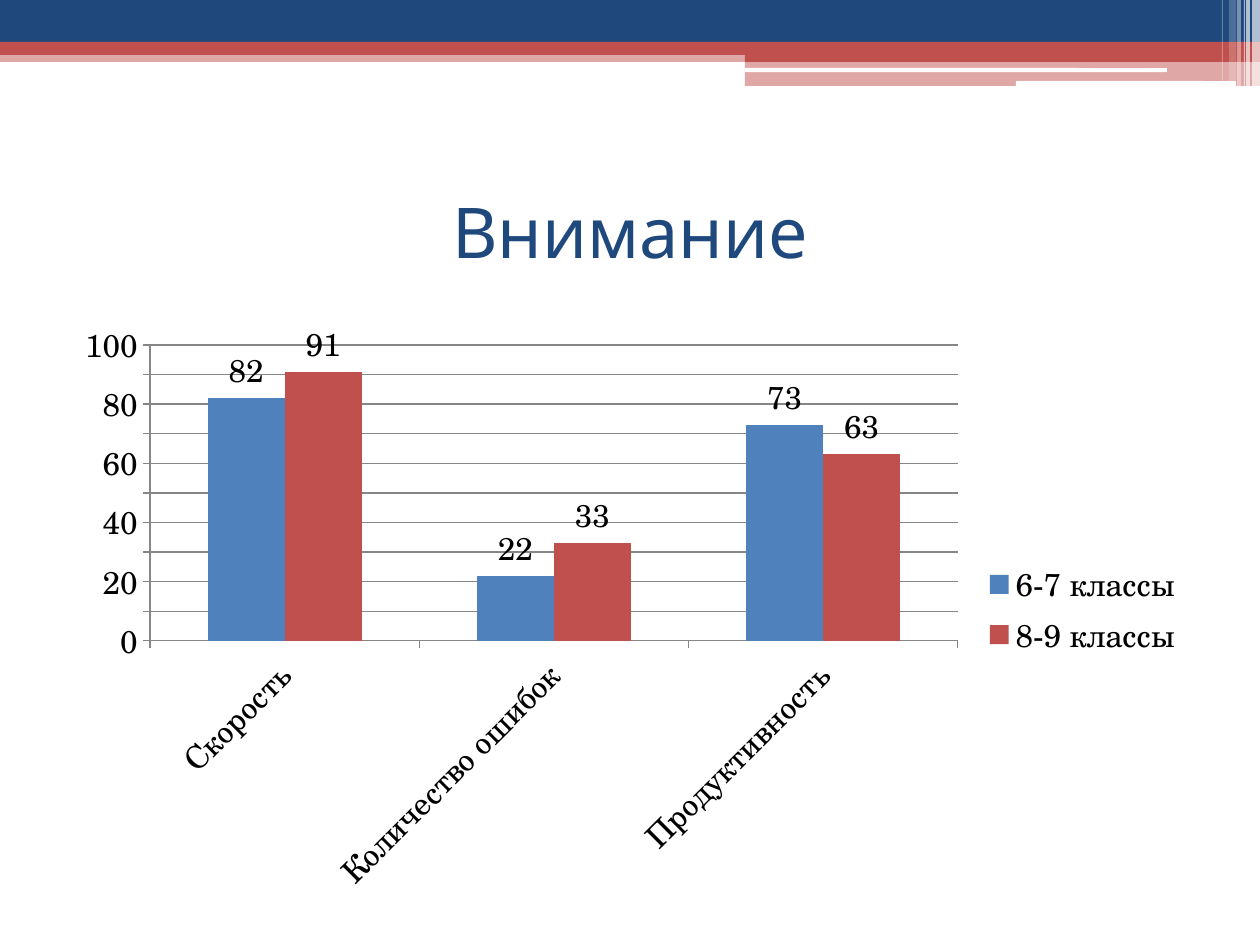
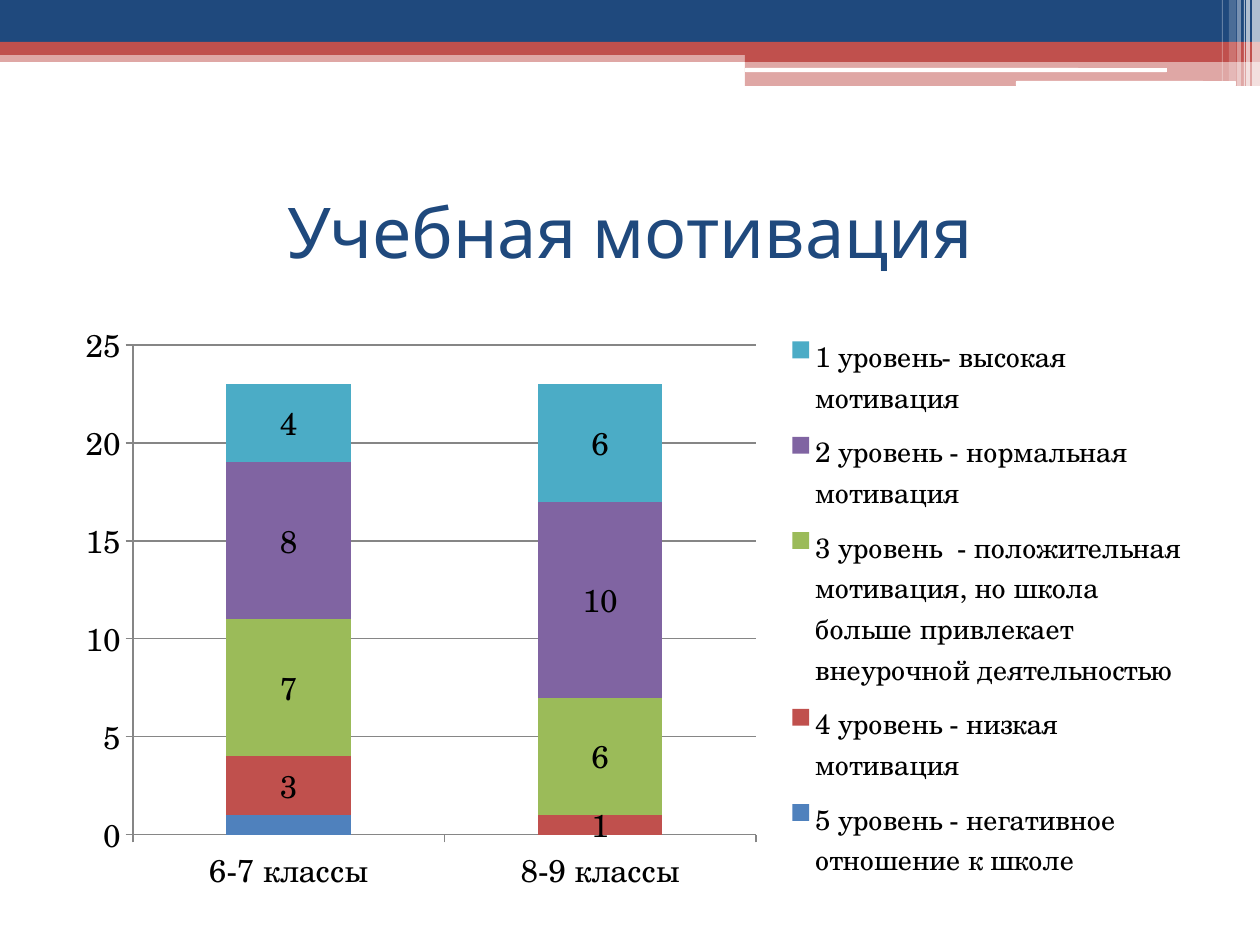
from lxml import etree
from pptx import Presentation
from pptx.chart.data import CategoryChartData
from pptx.dml.color import RGBColor
from pptx.enum.chart import XL_CHART_TYPE, XL_LABEL_POSITION, XL_LEGEND_POSITION, XL_TICK_MARK
from pptx.enum.shapes import MSO_SHAPE
from pptx.enum.text import MSO_ANCHOR, PP_ALIGN
from pptx.oxml import parse_xml
from pptx.oxml.ns import nsdecls, qn
from pptx.util import Pt

RECT, ROUNDED = MSO_SHAPE.RECTANGLE, MSO_SHAPE.ROUNDED_RECTANGLE
CLUSTERED, STACKED = XL_CHART_TYPE.COLUMN_CLUSTERED, XL_CHART_TYPE.COLUMN_STACKED
OUTSIDE, CENTER = XL_LABEL_POSITION.OUTSIDE_END, XL_LABEL_POSITION.CENTER
LEGEND_RIGHT = XL_LEGEND_POSITION.RIGHT
TICK_OUT, TICK_NONE = XL_TICK_MARK.OUTSIDE, XL_TICK_MARK.NONE

SLIDE_W, SLIDE_H = 1260, 945
PX = 914400 / 126  # EMU in one px
TITLE_BOX = (63, 157, 1134, 147)
CHART_BOX = (63, 310, 1134, 596)
TITLE_FONT, CHART_FONT = "Karla", "TeX Gyre Schola"

COLORS = {
    "navy": "1F497D", "red": "C0504D", "white": "FFFFFF", "black": "000000",
    "blue": "4F81BD", "green": "9BBB59", "purple": "8064A2", "teal": "4BACC6",
    "grey": "868686",
}

# Header bands: box, colour, opacity in percent, preset
HEADER = [
    ((0, 50, SLIDE_W, 12), "red", 50, RECT),
    ((0, 0, SLIDE_W, 42), "navy", 100, RECT),
    ((0, 42, SLIDE_W, 13), "red", 100, RECT),
    ((745, 49, 515, 13), "red", 100, RECT),
    ((745, 61, 515, 25), "red", 50, RECT),
    ((745, 68, 422, 4), "white", 100, ROUNDED),
    ((1016, 81, 220, 5), "white", 100, ROUNDED),
]
# Stripes at the right edge: left, width, height, opacity in percent
STRIPES = [(1252, 8, 86, 65), (1246, 4, 86, 65), (1244, 1, 86, 60),
           (1237, 4, 86, 40), (1229, 7, 81, 20), (1222, 1, 81, 30)]


def rgb(name):
    return RGBColor.from_string(COLORS[name])


def emu(box):
    return [round(length * PX) for length in box]


def manual_layout(box, inner=False):
    """Layout of a chart part, from its box on the slide."""
    left, top, width, height = CHART_BOX
    x, y, w, h = box
    values = {"xMode": "edge", "yMode": "edge",
              "x": round((x - left) / width, 4), "y": round((y - top) / height, 4),
              "w": round(w / width, 4), "h": round(h / height, 4)}
    if inner:
        values = {"layoutTarget": "inner", **values}
    children = "".join(f'<c:{tag} val="{value}"/>' for tag, value in values.items())
    return parse_xml(f'<c:layout {nsdecls("c")}><c:manualLayout>{children}'
                     '</c:manualLayout></c:layout>')


class Deck:
    def __init__(self):
        self.prs = Presentation()
        self.prs.slide_width, self.prs.slide_height = emu((SLIDE_W, SLIDE_H))
        self.slide = None

    def new_slide(self, title):
        self.slide = self.prs.slides.add_slide(self.prs.slide_layouts[6])
        for box, color, opacity, preset in HEADER:
            self.band(box, color, opacity, preset)
        for left, width, height, opacity in STRIPES:
            self.band((left, 0, width, height), "white", opacity)
        self.title(title)

    def band(self, box, color, opacity=100, preset=RECT):
        band = self.slide.shapes.add_shape(preset, *emu(box))
        band.shadow.inherit = False
        band.line.fill.background()
        band.fill.solid()
        band.fill.fore_color.rgb = rgb(color)
        if opacity < 100:
            fill = band.fill._xPr.find(qn("a:solidFill"))
            etree.SubElement(fill[0], qn("a:alpha")).set("val", str(opacity * 1000))

    def title(self, text):
        frame = self.slide.shapes.add_textbox(*emu(TITLE_BOX)).text_frame
        frame.word_wrap = True
        frame.vertical_anchor = MSO_ANCHOR.MIDDLE
        paragraph = frame.paragraphs[0]
        paragraph.text = text
        paragraph.alignment = PP_ALIGN.CENTER
        self.style_font(paragraph.font, 40, "navy", TITLE_FONT)

    def style_font(self, font, size, color="black", name=CHART_FONT):
        font.size, font.name = Pt(size), name
        font.color.rgb = rgb(color)

    def column_chart(self, kind, categories, series, top_value, step,
                     plot_box, legend_box, legend_size=18, label_angle=0):
        """Series are (name, values, colour, labelled)."""
        data = CategoryChartData()
        data.categories = categories
        for name, values, _, _ in series:
            data.add_series(name, values)
        chart = self.slide.shapes.add_chart(kind, *emu(CHART_BOX), data).chart
        chart.has_title = False
        self.style_font(chart.font, 18)

        # Columns and their values
        plot = chart.plots[0]
        plot.gap_width = 150
        plot.overlap = 100 if kind == STACKED else 0
        plot.vary_by_categories = False
        for column, (_, _, color, labelled) in zip(plot.series, series):
            column.format.fill.solid()
            column.format.fill.fore_color.rgb = rgb(color)
            if labelled:
                labels = column.data_labels
                labels.show_value = True
                labels.position = CENTER if kind == STACKED else OUTSIDE
                self.style_font(labels.font, 18)

        # Axes
        scale = chart.value_axis
        scale.minimum_scale, scale.maximum_scale, scale.major_unit = 0, top_value, step
        scale.has_major_gridlines = True
        for axis in (chart.category_axis, scale):
            axis.major_tick_mark, axis.minor_tick_mark = TICK_OUT, TICK_NONE
            self.style_font(axis.tick_labels.font, 18)
        for part in (chart.category_axis, scale, scale.major_gridlines):
            part.format.line.color.rgb = rgb("grey")
            part.format.line.width = Pt(0.75)
        if label_angle:
            body = chart.category_axis._element.find(qn("c:txPr")).find(qn("a:bodyPr"))
            body.set("rot", str(label_angle * 60000))
            body.set("vert", "horz")

        # Legend and placement
        chart.has_legend = True
        legend = chart.legend
        legend.position = LEGEND_RIGHT
        legend.include_in_layout = False
        self.style_font(legend.font, legend_size)
        for old in legend._element.findall(qn("c:layout")):
            legend._element.remove(old)
        legend._element.find(qn("c:legendPos")).addnext(manual_layout(legend_box))
        area = chart._chartSpace.chart.plotArea
        for old in area.findall(qn("c:layout")):
            area.remove(old)
        area.insert(0, manual_layout(plot_box, inner=True))


def main():
    deck = Deck()
    younger, older = "6-7 классы", "8-9 классы"

    # Attention
    deck.new_slide("Внимание")
    deck.column_chart(
        CLUSTERED, ["Скорость", "Количество ошибок", "Продуктивность"],
        [(younger, (82, 22, 73), "blue", True),
         (older, (91, 33, 63), "red", True)],
        top_value=100, step=10, plot_box=(150, 345, 808, 296),
        legend_box=(980, 557, 205, 105), label_angle=-45)

    # Motivation to learn
    deck.new_slide("Учебная мотивация")
    deck.column_chart(
        STACKED, [younger, older],
        [("5 уровень - негативное отношение к школе", (1, 0), "blue", False),
         ("4 уровень - низкая мотивация", (3, 1), "red", True),
         ("3 уровень  - положительная мотивация, но школа больше привлекает "
          "внеурочной деятельностью", (7, 6), "green", True),
         ("2 уровень - нормальная мотивация", (8, 10), "purple", True),
         ("1 уровень- высокая мотивация", (4, 6), "teal", True)],
        top_value=25, step=5, plot_box=(133, 345, 623, 490),
        legend_box=(783, 322, 408, 572), legend_size=16)

    deck.prs.save("out.pptx")


if __name__ == "__main__":
    main()
